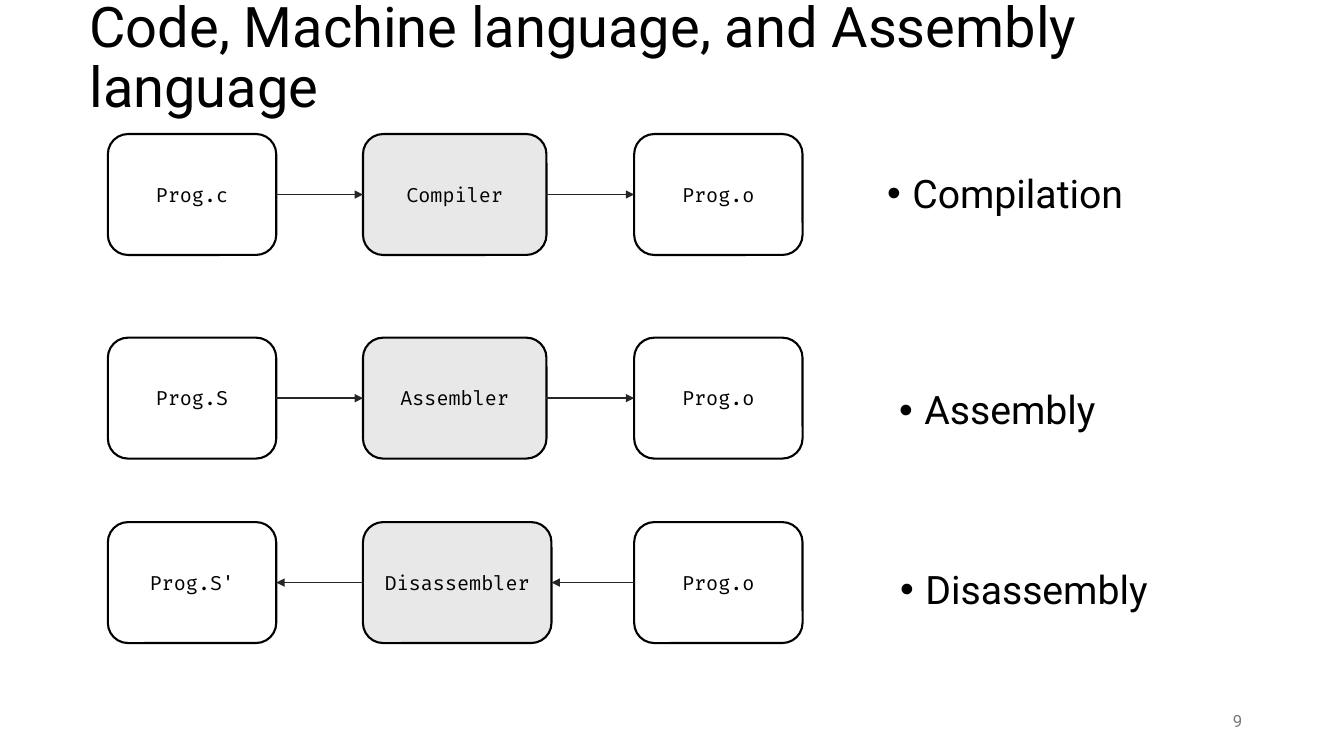
from lxml import etree
from pptx import Presentation
from pptx.dml.color import RGBColor
from pptx.enum.shapes import MSO_CONNECTOR, MSO_SHAPE
from pptx.enum.text import MSO_ANCHOR, PP_ALIGN
from pptx.oxml.ns import qn
from pptx.util import Inches, Pt


def rgb(value):
    return RGBColor.from_string(value)


def write(sp, text, size, font="Roboto", color="000000", align=PP_ALIGN.LEFT,
          anchor=MSO_ANCHOR.MIDDLE, spacing=None, bullet=False):
    """Fill a shape with one paragraph, bulleted on request."""
    tf = sp.text_frame
    tf.word_wrap = True
    tf.vertical_anchor = anchor
    p = tf.paragraphs[0]
    if bullet:
        pPr = p._p.get_or_add_pPr()
        pPr.set("marL", str(Inches(0.25)))
        pPr.set("indent", str(Inches(-0.25)))
        etree.SubElement(pPr, qn("a:buFont"), typeface="Arial")
        etree.SubElement(pPr, qn("a:buChar"), char="•")
    p.alignment = align
    p.line_spacing = spacing
    r = p.add_run()
    r.text = text
    for name, value in {"name": font, "size": Pt(size)}.items():
        setattr(r.font, name, value)
    r.font.color.rgb = rgb(color)


prs = Presentation()
prs.slide_width, prs.slide_height = Inches(13.33), Inches(7.5)
s = prs.slides.add_slide(prs.slide_layouts[6])

title = s.shapes.add_textbox(Inches(0.79), Inches(0.15), Inches(11.5), Inches(0.88))
write(title, "Code, Machine language, and Assembly language", 40, spacing=0.9)

# Box top, tool width, box texts, arrow end, label and its position
flows = [
    (1.33, 1.82, ("Prog.c", "Compiler", "Prog.o"), "a:tailEnd", "Compilation", 8.7, 1.68),
    (3.35, 1.82, ("Prog.S", "Assembler", "Prog.o"), "a:tailEnd", "Assembly", 8.82, 3.83),
    (5.18, 1.87, ("Prog.S'", "Disassembler", "Prog.o"), "a:headEnd", "Disassembly", 8.83, 5.61),
]
for top, tool_width, names, arrow_end, label, label_left, label_top in flows:
    boxes = []
    columns = [(1.07, 1.67, None), (3.6, tool_width, "E8E8E8"), (6.29, 1.67, None)]
    for name, (left, width, fill) in zip(names, columns):
        sp = s.shapes.add_shape(MSO_SHAPE.ROUNDED_RECTANGLE, Inches(left), Inches(top),
                                Inches(width), Inches(1.2))
        sp.shadow.inherit = False
        if fill:
            sp.fill.solid()
            sp.fill.fore_color.rgb = rgb(fill)
        else:
            sp.fill.background()
        sp.line.color.rgb = rgb("000000")
        sp.line.width = Pt(1.5)
        write(sp, name, 14, font="Fira Code", align=PP_ALIGN.CENTER)
        boxes.append(sp)

    for source, target in zip(boxes, boxes[1:]):
        arrow = s.shapes.add_connector(MSO_CONNECTOR.STRAIGHT, 0, 0, 0, 0)
        arrow.begin_connect(source, 3)
        arrow.end_connect(target, 1)
        arrow.line.color.rgb = rgb("262626")
        arrow.line.width = Pt(1)
        etree.SubElement(arrow.line._get_or_add_ln(), qn(arrow_end), type="triangle")
        etree.SubElement(arrow._element.spPr, qn("a:effectLst"))

    tb = s.shapes.add_textbox(Inches(label_left), Inches(label_top), Inches(4.16), Inches(0.73))
    write(tb, label, 28, anchor=MSO_ANCHOR.TOP, spacing=0.9, bullet=True)

number = s.shapes.add_textbox(Inches(9.42), Inches(6.95), Inches(3), Inches(0.4))
write(number, "9", 12, color="797979", align=PP_ALIGN.RIGHT)

prs.save("out.pptx")
